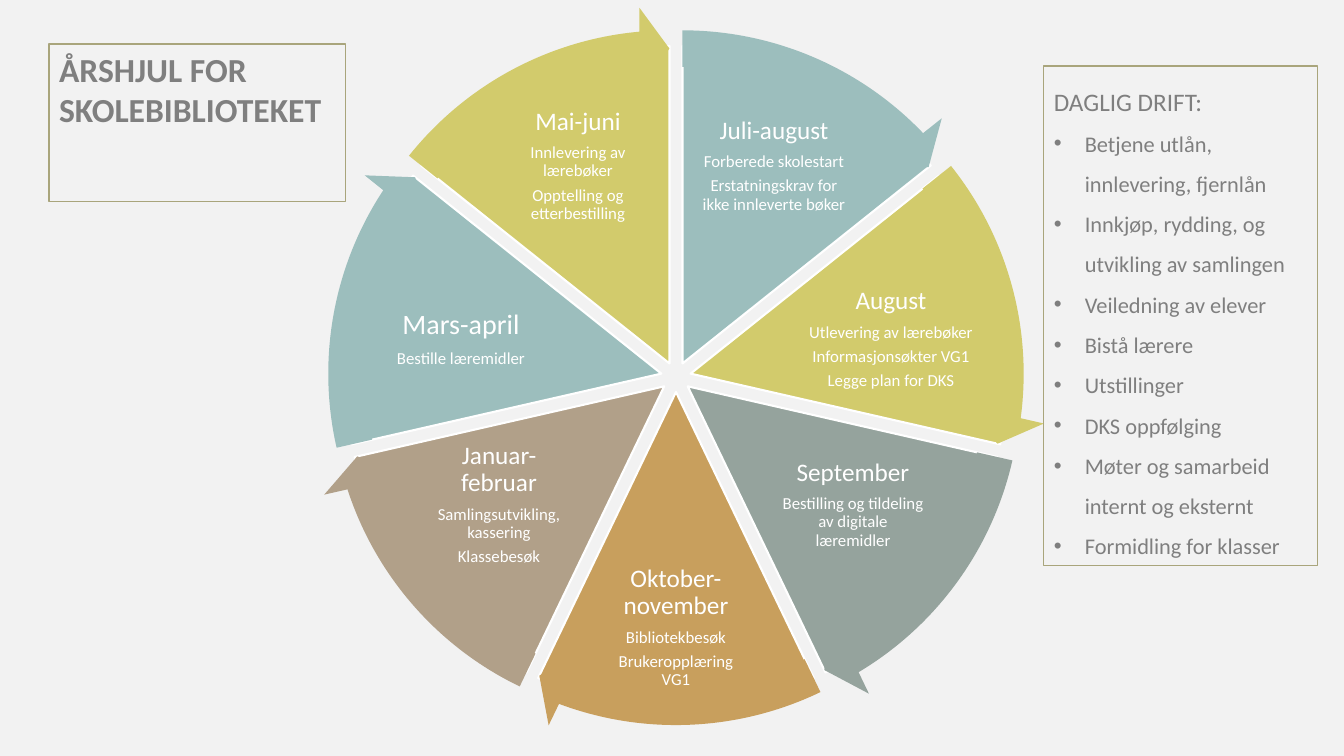
from dataclasses import dataclass
from math import cos, radians, sin

from lxml.etree import SubElement
from pptx import Presentation
from pptx.dml.color import RGBColor
from pptx.enum.shapes import MSO_SHAPE
from pptx.enum.text import MSO_ANCHOR, MSO_AUTO_SIZE, PP_ALIGN
from pptx.oxml.ns import qn
from pptx.util import Emu, Pt


@dataclass(frozen=True)
class Theme:
    font: str = "Calibri"
    background: str = "F2F2F2"
    white: str = "FFFFFF"
    text: str = "7F7F7F"
    border: str = "A9A57C"
    teal: str = "9CBEBD"
    lime: str = "D2CB6C"
    sage: str = "95A39D"
    ochre: str = "C89F5D"
    taupe: str = "B1A089"
    title_size: int = 24
    large_month_size: int = 20
    month_size: int = 18
    task_size: int = 12
    bullet_size: int = 16


THEME = Theme()
EMU_PER_PX = 12192000 / 1344
CENTRE_X, CENTRE_Y = 676, 377
PIE_SIZE, ARROW_SIZE, GAP = 635, 714, 15
HEAD_ANGLE = 5.46

# colour, month, month size, text box (offset from centre, top, width, height), tasks
PERIODS = [
    (THEME.teal, "Juli-august", THEME.month_size, (98, 105, 151, 121),
     ["Forberede skolestart", "Erstatningskrav for ikke innleverte bøker"]),
    (THEME.lime, "August", THEME.month_size, (215, 286, 174, 106),
     ["Utlevering av lærebøker", "Informasjonsøkter VG1", "Legge plan for DKS"]),
    (THEME.sage, "September", THEME.month_size, (177, 446, 151, 117),
     ["Bestilling og tildeling av digitale læremidler"]),
    (THEME.ochre, "Oktober-november", THEME.month_size, (0, 574, 147, 106),
     ["Bibliotekbesøk", "Brukeropplæring VG1"]),
    (THEME.taupe, "Januar-februar", THEME.month_size, (-177, 446, 151, 117),
     ["Samlingsutvikling, kassering", "Klassebesøk"]),
    (THEME.teal, "Mars-april", THEME.large_month_size, (-215, 286, 174, 106),
     ["Bestille læremidler"]),
    (THEME.lime, "Mai-juni", THEME.month_size, (-98, 105, 151, 121),
     ["Innlevering av lærebøker", "Opptelling og etterbestilling"]),
]
SWEEP = 360 / len(PERIODS)

DAILY_TASKS = [
    "Betjene utlån, innlevering, fjernlån",
    "Innkjøp, rydding, og utvikling av samlingen",
    "Veiledning av elever",
    "Bistå lærere",
    "Utstillinger",
    "DKS oppfølging",
    "Møter og samarbeid internt og eksternt",
    "Formidling for klasser",
]


def px(n):
    return Emu(round(n * EMU_PER_PX))


def rgb(value):
    return RGBColor.from_string(value)


def angle_adj(degrees):
    """Preset angles are 60000ths of a degree; adjustments count in 100000ths."""
    return degrees % 360 * 0.6


def add_run(p, text, size, color, bold=False):
    r = p.add_run()
    r.text = text
    r.font.name = THEME.font
    r.font.size = Pt(size)
    r.font.bold = bold
    r.font.color.rgb = rgb(color)


def add_paragraph(tf, first):
    return tf.paragraphs[0] if first else tf.add_paragraph()


def add_bullet(p):
    pPr = p._p.get_or_add_pPr()
    pPr.set("marL", str(px(31)))
    pPr.set("indent", str(-px(31)))
    SubElement(pPr, qn("a:buFont")).set("typeface", "Arial")
    SubElement(pPr, qn("a:buChar")).set("char", "•")


def frame(sp):
    sp.line.color.rgb = rgb(THEME.border)
    sp.line.width = Pt(0.75)
    tf = sp.text_frame
    tf.word_wrap = True
    tf.auto_size = MSO_AUTO_SIZE.SHAPE_TO_FIT_TEXT
    tf.vertical_anchor = MSO_ANCHOR.TOP
    return tf


def add_wheel_shape(slide, kind, index, size, color):
    """Place a shape on the wheel, moved outwards along its sector's bisector."""
    middle = radians(270 + (index + 0.5) * SWEEP)
    x = CENTRE_X + GAP * cos(middle) - size / 2
    y = CENTRE_Y + GAP * sin(middle) - size / 2
    sp = slide.shapes.add_shape(kind, px(x), px(y), px(size), px(size))
    sp.shadow.inherit = False
    sp.fill.solid()
    sp.fill.fore_color.rgb = rgb(color)
    return sp


def add_sector(slide, index, color):
    sp = add_wheel_shape(slide, MSO_SHAPE.PIE, index, PIE_SIZE, color)
    start = 270 + index * SWEEP
    sp.adjustments[0] = angle_adj(start)
    sp.adjustments[1] = angle_adj(start + SWEEP)
    sp.line.color.rgb = rgb(THEME.white)
    sp.line.width = Pt(1.5)


def add_arrow(slide, index, color):
    sp = add_wheel_shape(slide, MSO_SHAPE.CIRCULAR_ARROW, index, ARROW_SIZE, color)
    start = 270 + index * SWEEP
    values = (0.051, angle_adj(HEAD_ANGLE), angle_adj(start + SWEEP - HEAD_ANGLE),
              angle_adj(start), 0.059)
    for i, value in enumerate(values):
        sp.adjustments[i] = value
    sp.line.fill.background()


def add_period_text(slide, month, month_size, box, tasks):
    dx, top, width, height = box
    sp = slide.shapes.add_textbox(px(CENTRE_X + dx - width / 2), px(top), px(width), px(height))
    tf = sp.text_frame
    tf.word_wrap = True
    tf.vertical_anchor = MSO_ANCHOR.MIDDLE
    tf.margin_left = tf.margin_right = tf.margin_top = tf.margin_bottom = px(3)
    for i, text in enumerate([month, *tasks]):
        size = THEME.task_size if i else month_size
        p = add_paragraph(tf, i == 0)
        p.alignment = PP_ALIGN.CENTER
        p.line_spacing = 0.9
        p.space_after = Pt(size * 0.35)
        add_run(p, text, size, THEME.white)


def add_title(slide, text):
    sp = slide.shapes.title
    sp.left, sp.top, sp.width, sp.height = px(49), px(44), px(297), px(92)
    p = frame(sp).paragraphs[0]
    p.alignment = PP_ALIGN.LEFT
    add_run(p, text, THEME.title_size, THEME.text, bold=True)


def add_daily_list(slide, heading, tasks):
    sp = slide.shapes.add_textbox(px(1044), px(66), px(274), px(500))
    tf = frame(sp)
    for i, text in enumerate([heading, *tasks]):
        p = add_paragraph(tf, i == 0)
        p.line_spacing = 1.5
        if i:
            add_bullet(p)
        add_run(p, text, THEME.bullet_size if i else THEME.month_size, THEME.text)


def main():
    prs = Presentation()
    prs.slide_width, prs.slide_height = px(1344), px(756)
    slide = prs.slides.add_slide(prs.slide_layouts[5])
    slide.background.fill.solid()
    slide.background.fill.fore_color.rgb = rgb(THEME.background)
    add_title(slide, "ÅRSHJUL FOR SKOLEBIBLIOTEKET")
    for i, (color, *content) in enumerate(PERIODS):
        add_sector(slide, i, color)
        add_period_text(slide, *content)
    for i, (color, *_) in enumerate(PERIODS):
        add_arrow(slide, i, color)
    add_daily_list(slide, "DAGLIG DRIFT:", DAILY_TASKS)
    prs.save("out.pptx")


if __name__ == "__main__":
    main()
